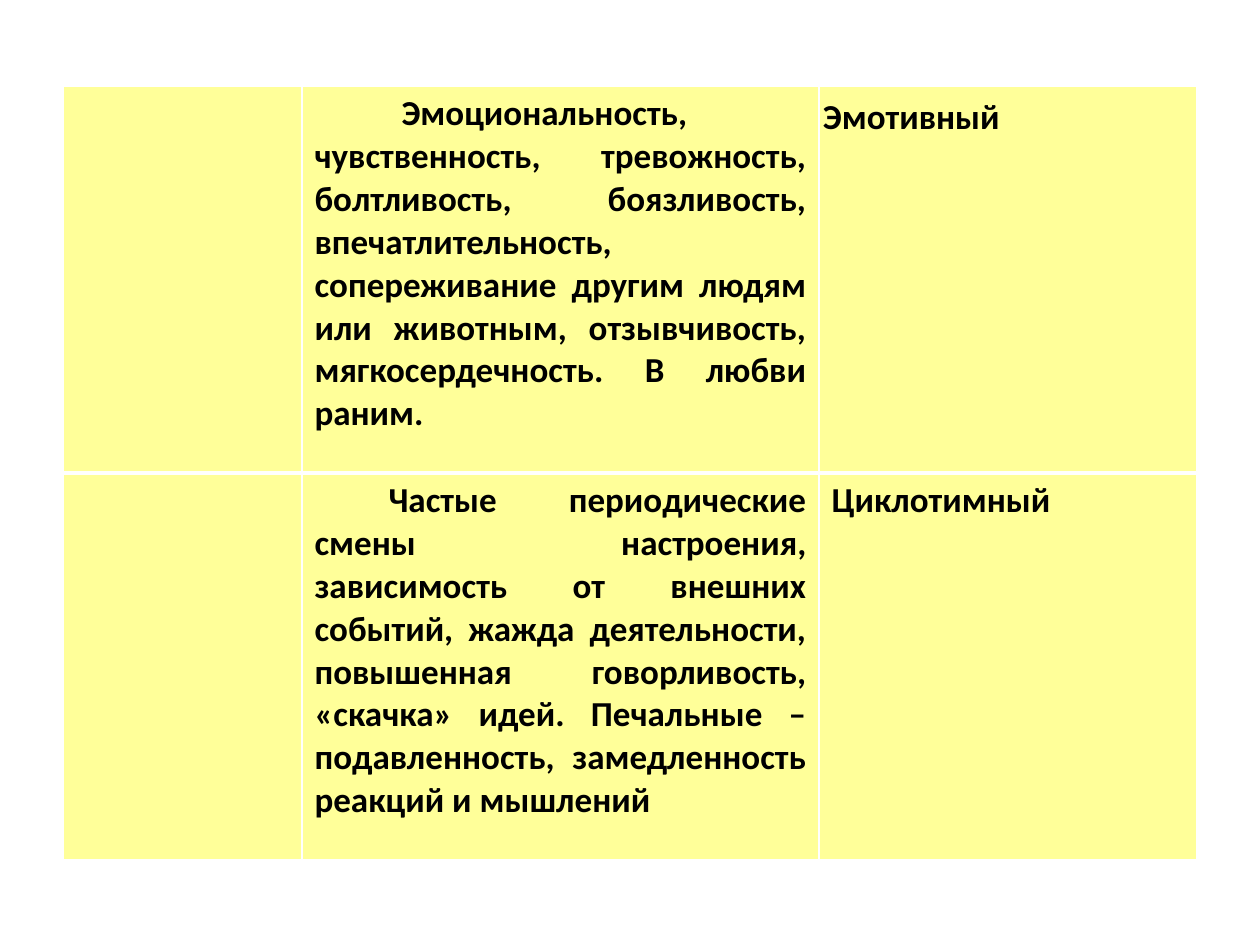
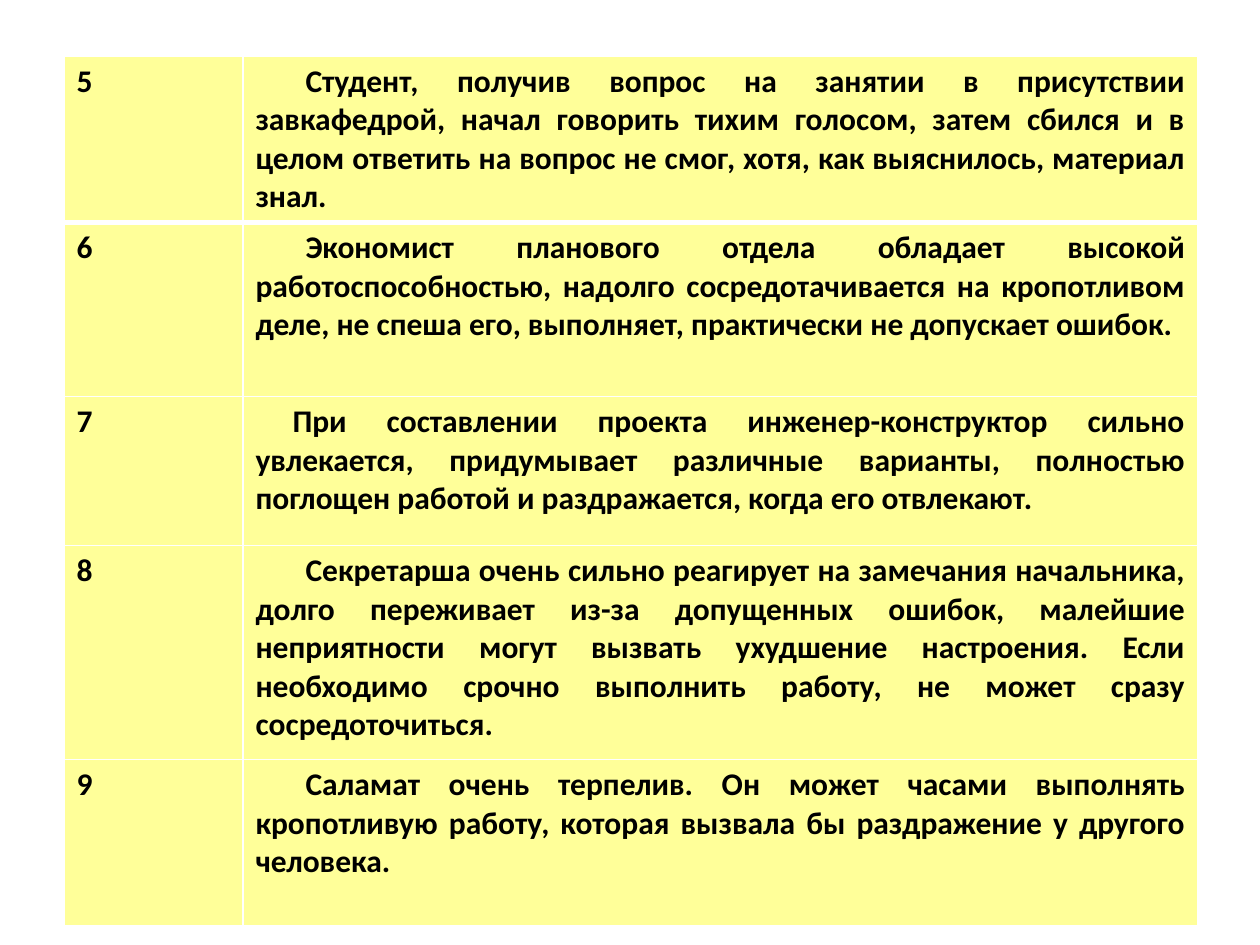
"""Builds two slides with tables of personality types and practice cases."""
from dataclasses import dataclass

from lxml import etree
from pptx import Presentation
from pptx.dml.color import RGBColor
from pptx.enum.text import PP_ALIGN
from pptx.oxml.ns import qn
from pptx.util import Emu, Pt

JUSTIFY = PP_ALIGN.JUSTIFY
EMU_PER_PX = 914400 / 126
BLANK_LAYOUT = 6
FONT = "Calibri"
YELLOW, WHITE, BLACK = "FFFF99", "FFFFFF", "000000"
THIN, THICK = 1, 3


@dataclass(frozen=True)
class Entry:
    text: str = ""
    indent: int = 0
    margin: int | None = None
    line_spacing: float | None = None
    space_after: float | None = None


@dataclass(frozen=True)
class Grid:
    left: int
    top: int
    columns: list[int]
    heights: list[int]
    size: int
    rows: list[list[Entry]]


def px(length: int) -> Emu:
    return Emu(round(length * EMU_PER_PX))


def color(value: str) -> RGBColor:
    return RGBColor.from_string(value)


def write(frame, text: str, *, size: int, indent: int = 0,
          line_spacing: float | None = None, space_after: float | None = None) -> None:
    paragraph = frame.paragraphs[0]
    paragraph.alignment = JUSTIFY
    if indent:
        properties = paragraph._p.get_or_add_pPr()
        properties.set("marL", "0")
        properties.set("indent", str(px(indent)))
    if line_spacing is not None:
        paragraph.line_spacing = line_spacing
    if space_after is not None:
        paragraph.space_after = Pt(space_after)
    run = paragraph.add_run()
    run.text = text
    run.font.name = FONT
    run.font.size = Pt(size)
    run.font.bold = True
    run.font.color.rgb = color(BLACK)


def add_borders(cell, top: int, bottom: int) -> None:
    properties = cell._tc.get_or_add_tcPr()
    for edge, width in (("L", THIN), ("R", THIN), ("T", top), ("B", bottom)):
        line = etree.SubElement(properties, qn(f"a:ln{edge}"), w=str(Pt(width)))
        fill = etree.SubElement(line, qn("a:solidFill"))
        etree.SubElement(fill, qn("a:srgbClr"), val=WHITE)


def fill_cell(cell, entry: Entry, row: int, size: int) -> None:
    add_borders(cell, THICK if row == 1 else THIN, THICK if row == 0 else THIN)
    cell.fill.solid()
    cell.fill.fore_color.rgb = color(YELLOW)
    if entry.margin is not None:
        margin = px(entry.margin)
        cell.margin_left = cell.margin_right = margin
        cell.margin_top = cell.margin_bottom = margin
    if entry.text:
        write(cell.text_frame, entry.text, size=size, indent=entry.indent,
              line_spacing=entry.line_spacing, space_after=entry.space_after)


def add_grid(slide, grid: Grid) -> None:
    table = slide.shapes.add_table(
        len(grid.heights), len(grid.columns), px(grid.left), px(grid.top),
        px(sum(grid.columns)), px(sum(grid.heights))).table
    table.first_row = False
    table.horz_banding = False
    for column, width in zip(table.columns, grid.columns):
        column.width = px(width)
    for row, height in zip(table.rows, grid.heights):
        row.height = px(height)
    for r, entries in enumerate(grid.rows):
        for c, entry in enumerate(entries):
            fill_cell(table.cell(r, c), entry, r, grid.size)


PERSONALITY_TYPES = Grid(63, 86, [239, 517, 378], [387, 387], 20, [
    [Entry(),
     Entry("Эмоциональность, чувственность, тревожность, болтливость, боязливость, "
           "впечатлительность, сопереживание другим людям или животным, отзывчивость, "
           "мягкосердечность. В любви раним.", indent=87),
     Entry("Эмотивный", margin=4, line_spacing=1.15, space_after=5)],
    [Entry(),
     Entry("Частые периодические смены настроения, зависимость от внешних событий, "
           "жажда деятельности, повышенная говорливость, «скачка» идей. Печальные – "
           "подавленность, замедленность реакций и мышлений", indent=74),
     Entry("Циклотимный")],
])

FIRST_CASE = 5
CASES = [
    Entry("Студент, получив вопрос на занятии в присутствии завкафедрой, начал говорить "
          "тихим голосом, затем сбился и в целом ответить на вопрос не смог, хотя, как "
          "выяснилось, материал знал.", indent=50),
    Entry("Экономист планового отдела обладает высокой работоспособностью, надолго "
          "сосредотачивается на кропотливом деле, не спеша его, выполняет, практически "
          "не допускает ошибок.", indent=50),
    Entry("При составлении проекта инженер-конструктор сильно увлекается, придумывает "
          "различные варианты, полностью поглощен работой и раздражается, когда его "
          "отвлекают.", indent=37),
    Entry("Секретарша очень сильно реагирует на замечания начальника, долго переживает "
          "из-за допущенных ошибок, малейшие неприятности могут вызвать ухудшение "
          "настроения. Если необходимо срочно выполнить работу, не может сразу "
          "сосредоточиться.", indent=50),
    Entry("Саламат очень терпелив. Он может часами выполнять кропотливую работу, "
          "которая вызвала бы раздражение у другого человека.", indent=50),
]
PRACTICE_CASES = Grid(64, 56, [179, 955], [166, 174, 149, 214, 166], 18, [
    [Entry(str(number)), case] for number, case in enumerate(CASES, FIRST_CASE)
])


def main() -> None:
    deck = Presentation()
    deck.slide_width, deck.slide_height = px(1260), px(945)
    for grid in (PERSONALITY_TYPES, PRACTICE_CASES):
        add_grid(deck.slides.add_slide(deck.slide_layouts[BLANK_LAYOUT]), grid)
    deck.save("out.pptx")


if __name__ == "__main__":
    main()
